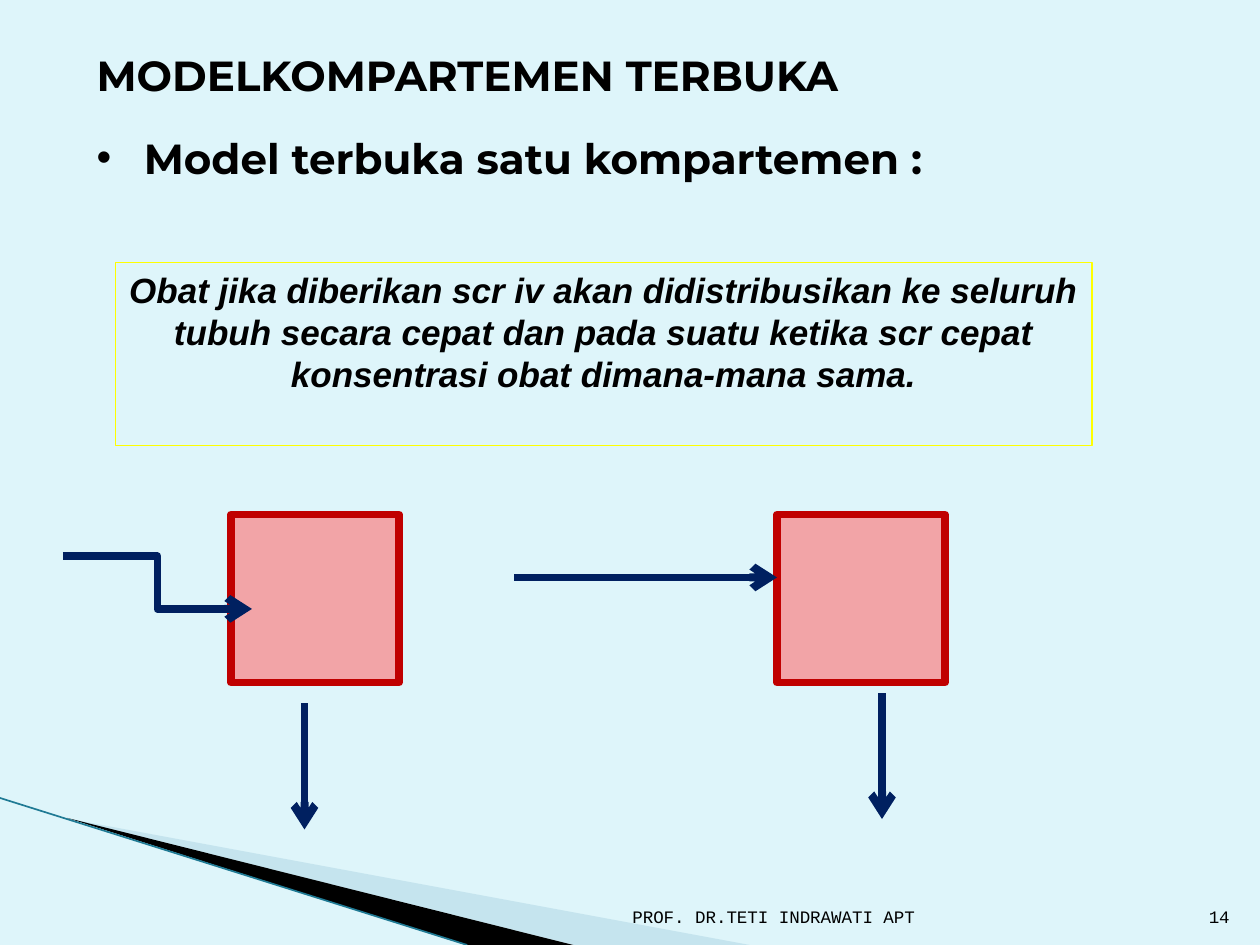
from lxml.etree import SubElement as Sub
from pptx import Presentation
from pptx.dml.color import RGBColor as RGB
from pptx.enum.shapes import MSO_CONNECTOR as Link, MSO_SHAPE as Kind
from pptx.enum.text import MSO_ANCHOR as Anchor, PP_ALIGN as Align
from pptx.oxml.ns import qn
from pptx.util import Inches, Pt

# Grid: 120 columns by 90 rows, twelve to the inch
COLS, ROWS = 120, 90
HEX = {"sky": "DEF5FA", "ink": "000000", "pale": "A0CBDC", "teal": "1F7A94",
       "gold": "FFFF00", "pink": "F2A4A7", "red": "C00000", "navy": "002060"}
HEAD = {"name": "Montserrat", "size": Pt(24), "bold": True}
BODY = {"name": "Arial", "size": Pt(20), "bold": True, "italic": True}
FOOT = {"name": "Courier New", "size": Pt(10)}


def unit(n):
    return Inches(n / 12)


def tint(name):
    return RGB.from_string(HEX[name])


def place(shape, col, row, wide, high):
    spot = {"left": col, "top": row, "width": wide, "height": high}
    for key, val in spot.items():
        setattr(shape, key, unit(val))


def write(shape, text, form, align=Align.LEFT, anchor=Anchor.TOP):
    frame = shape.text_frame
    frame.text = text
    frame.word_wrap = True
    frame.vertical_anchor = anchor
    para = frame.paragraphs[0]
    para.alignment = align
    para.space_before = Pt(0)
    for key, val in form.items():
        setattr(para.font, key, val)
    para.font.color.rgb = tint("ink")


def heading(shape, text, row, wide):
    place(shape, 8, row, wide, 10.9)
    props = shape.text_frame.paragraphs[0]._p.get_or_add_pPr()
    props.set("marL", "0")
    props.set("indent", "0")
    Sub(props, qn("a:buNone"))
    write(shape, text, HEAD)


def box(slide, col, row, wide, high, edge, width, fill=None):
    shape = slide.shapes.add_shape(
        Kind.RECTANGLE, *map(unit, (col, row, wide, high)))
    shape.shadow.inherit = False
    if fill:
        shape.fill.solid()
        shape.fill.fore_color.rgb = tint(fill)
    else:
        shape.fill.background()
    shape.line.color.rgb = tint(edge)
    shape.line.width = Pt(width)
    return shape


def wire(slide, start, end, color, width, kind=Link.STRAIGHT, head=True):
    line = slide.shapes.add_connector(kind, *map(unit, start + end))
    line.line.color.rgb = tint(color)
    line.line.width = Pt(width)
    if head:
        Sub(line.line._get_or_add_ln(), qn("a:tailEnd"), type="arrow")
    Sub(line._element.spPr, qn("a:effectLst"))


def wedge(slide, points, fill, alpha=None):
    dots = [tuple(map(unit, dot)) for dot in points]
    pen = slide.shapes.build_freeform(*dots[0])
    pen.add_line_segments(dots[1:], close=True)
    shape = pen.convert_to_shape()
    shape.shadow.inherit = False
    shape.fill.solid()
    shape.fill.fore_color.rgb = tint(fill)
    shape.line.fill.background()
    if alpha:
        clr = shape._element.spPr.find(".//" + qn("a:srgbClr"))
        Sub(clr, qn("a:alpha"), val=str(alpha * 1000))


def label(slide, text, col, wide):
    spot = map(unit, (col, 84.1, wide, 4.8))
    write(slide.shapes.add_textbox(*spot), text, FOOT,
          Align.RIGHT, Anchor.BOTTOM)


def main():
    prs = Presentation()
    prs.slide_width, prs.slide_height = unit(COLS), unit(ROWS)
    slide = prs.slides.add_slide(prs.slide_layouts[1])
    slide.background.fill.solid()
    slide.background.fill.fore_color.rgb = tint("sky")

    # Corner decoration
    wedge(slide, [(6.6, 78), (71.4, ROWS), (54.7, ROWS)], "pale", 40)
    wedge(slide, [(6.4, 77.9), (54.6, ROWS), (44.4, ROWS)], "ink")
    wire(slide, (0, 76), (44.5, ROWS), "teal", 0.95, head=False)

    # Headings
    title, body = slide.placeholders
    heading(title, "MODELKOMPARTEMEN TERBUKA", 4.1, 95)
    heading(body, "Model terbuka satu kompartemen :", 12, 83)

    # Definition
    note = box(slide, 11, 25, 93, 17.4, "gold", 0.75)
    write(note, "Obat jika diberikan scr iv akan didistribusikan ke seluruh "
          "tubuh secara cepat dan pada suatu ketika scr cepat konsentrasi "
          "obat dimana-mana sama.", BODY, Align.CENTER)

    # Compartments, each with its way out
    for col, out, top in ((22, 29, 67), (74, 84, 66)):
        box(slide, col, 49, 16, 16, "red", 4.33, "pink")
        wire(slide, (out, top), (out, top + 12), "navy", 4.5)

    # Ways in
    wire(slide, (6, 53), (24, 58), "navy", 4.5, Link.ELBOW)
    wire(slide, (49, 55), (74, 55), "navy", 4.5)

    # Footer
    label(slide, "PROF. DR.TETI INDRAWATI APT", 57.5, 30.8)
    label(slide, "14", 113.5, 4.8)
    prs.save("out.pptx")


if __name__ == "__main__":
    main()
